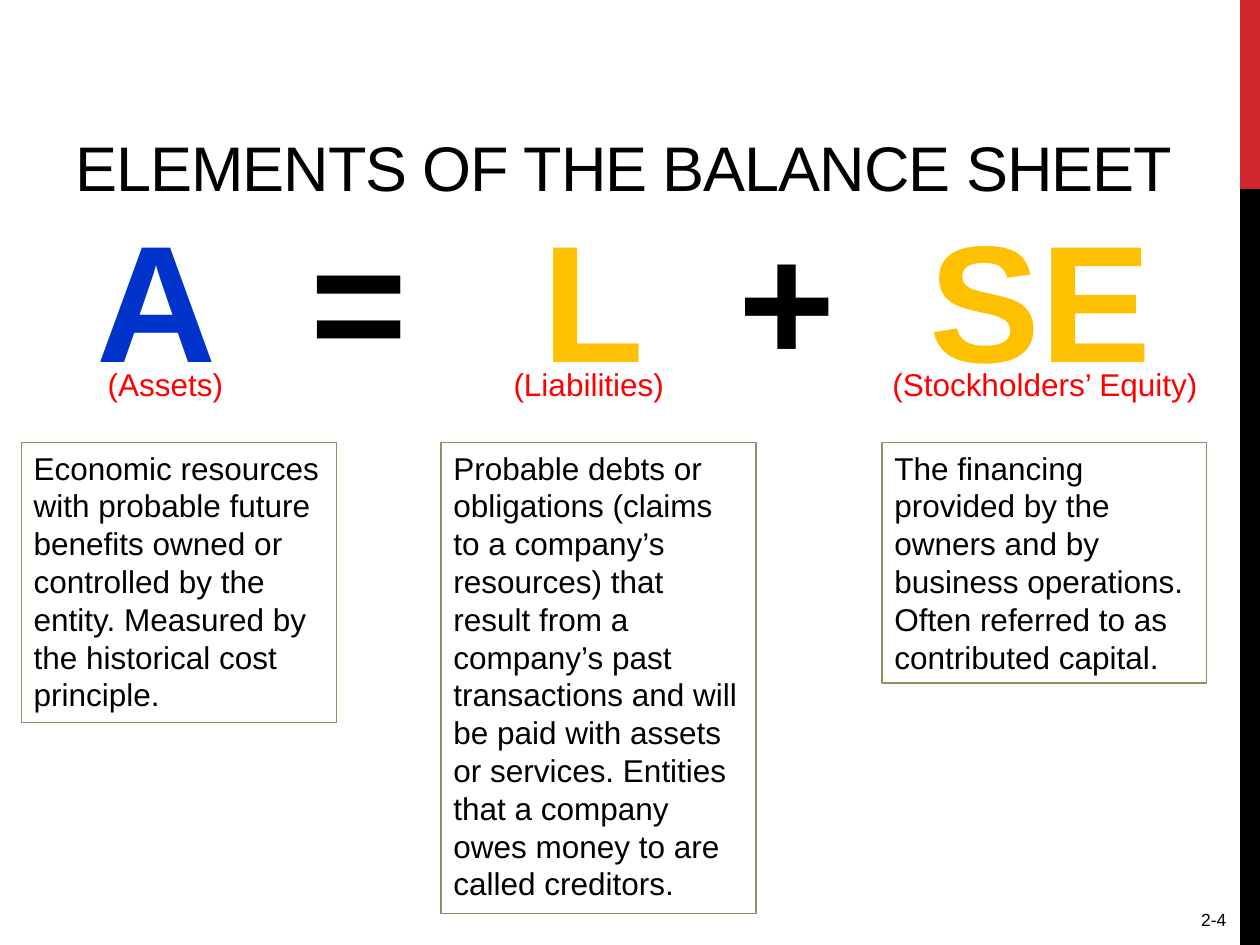
"""Build the slide on the elements of the balance sheet."""
from lxml.etree import SubElement
from pptx import Presentation
from pptx.dml.color import RGBColor
from pptx.enum.shapes import MSO_SHAPE
from pptx.enum.text import MSO_ANCHOR, PP_ALIGN
from pptx.oxml.ns import qn
from pptx.util import Cm, Pt

BLACK = RGBColor(0x00, 0x00, 0x00)
BLUE = RGBColor(0x00, 0x33, 0xCC)
GOLD = RGBColor(0xFF, 0xC0, 0x00)
RED = RGBColor(0xFF, 0x00, 0x00)
CRIMSON = RGBColor(0xD1, 0x28, 0x2E)
OLIVE = RGBColor(0x91, 0x90, 0x64)

TITLE = "ELEMENTS OF THE BALANCE SHEET"
PAGE = "2-4"
SIDE_BARS = [(0, 3.81, CRIMSON), (3.81, 15.24, BLACK)]
EQUATION = [
    ("A", BLUE, 1.87),
    ("=", BLACK, 5.94),
    ("L", GOLD, 10.67),
    ("+", BLACK, 14.58),
    ("SE", GOLD, 19.69),
]
ELEMENTS = [
    {"label": "(Assets)", "label_box": (1.9, 2.87), "box": (0.43, 6.35, 5.64),
     "definition": "Economic resources with probable future benefits owned or "
                   "controlled by the entity. Measured by the historical cost principle."},
    {"label": "(Liabilities)", "label_box": (10.08, 3.58), "box": (8.89, 6.35, 9.5),
     "definition": "Probable debts or obligations (claims to a company’s resources) that "
                   "result from a company’s past transactions and will be paid with assets "
                   "or services. Entities that a company owes money to are called creditors."},
    {"label": "(Stockholders’ Equity)", "label_box": (17.04, 8.05), "box": (17.78, 6.55, 4.85),
     "definition": "The financing provided by the owners and by business operations. "
                   "Often referred to as contributed capital."},
]
LABEL_TOP, LABEL_HEIGHT = 7.24, 1.02
DEFINITION_TOP = 8.92


def add_run(paragraph, text, size, color, bold=False):
    run = paragraph.add_run()
    run.text = text
    run.font.name = "Arial"
    run.font.size = Pt(size)
    run.font.bold = bold
    run.font.color.rgb = color
    return run


def add_text_box(slide, left, top, width, height, align=PP_ALIGN.LEFT):
    box = slide.shapes.add_textbox(Cm(left), Cm(top), Cm(width), Cm(height))
    box.text_frame.word_wrap = True
    box.text_frame.paragraphs[0].alignment = align
    return box.text_frame


def add_rectangle(slide, left, top, width, height):
    rectangle = slide.shapes.add_shape(
        MSO_SHAPE.RECTANGLE, Cm(left), Cm(top), Cm(width), Cm(height))
    rectangle.shadow.inherit = False
    return rectangle


def add_side_bars(slide):
    for top, height, color in SIDE_BARS:
        bar = add_rectangle(slide, 25, top, 0.4, height)
        bar.fill.solid()
        bar.fill.fore_color.rgb = color
        bar.line.fill.background()


def add_title(slide):
    frame = add_text_box(slide, 1.27, 0.43, 23.29, 3.81)
    frame.vertical_anchor = MSO_ANCHOR.BOTTOM
    run = add_run(frame.paragraphs[0], TITLE, 36, BLACK)
    run.font._element.set("spc", "-60")


def add_equation(slide):
    paragraph = add_text_box(slide, 1.04, 3.84, 23.09, 4.27).paragraphs[0]
    paragraph.space_before = Pt(9)
    tab_stops = SubElement(paragraph._p.get_or_add_pPr(), qn("a:tabLst"))
    for term, color, center in EQUATION:
        SubElement(tab_stops, qn("a:tab"), pos=str(Cm(center)), algn="ctr")
        add_run(paragraph, "\t" + term, 95, color, bold=True)


def add_element(slide, element):
    left, width = element["label_box"]
    label = add_text_box(slide, left, LABEL_TOP, width, LABEL_HEIGHT, PP_ALIGN.CENTER)
    label.word_wrap = False
    add_run(label.paragraphs[0], element["label"], 18, RED)

    left, width, height = element["box"]
    definition = add_rectangle(slide, left, DEFINITION_TOP, width, height)
    definition.fill.background()
    definition.line.color.rgb = OLIVE
    definition.line.width = Pt(0.75)
    frame = definition.text_frame
    frame.word_wrap = True
    frame.vertical_anchor = MSO_ANCHOR.TOP
    frame.paragraphs[0].alignment = PP_ALIGN.LEFT
    add_run(frame.paragraphs[0], element["definition"], 18, BLACK)


def main():
    presentation = Presentation()
    presentation.slide_width, presentation.slide_height = Cm(25.4), Cm(19.05)
    slide = presentation.slides.add_slide(presentation.slide_layouts[6])
    add_side_bars(slide)
    page = add_text_box(slide, 21.79, 18.21, 3.18, 0.69, PP_ALIGN.RIGHT)
    add_run(page.paragraphs[0], PAGE, 10, BLACK)
    add_title(slide)
    add_equation(slide)
    for element in ELEMENTS:
        add_element(slide, element)
    presentation.save("out.pptx")


if __name__ == "__main__":
    main()
